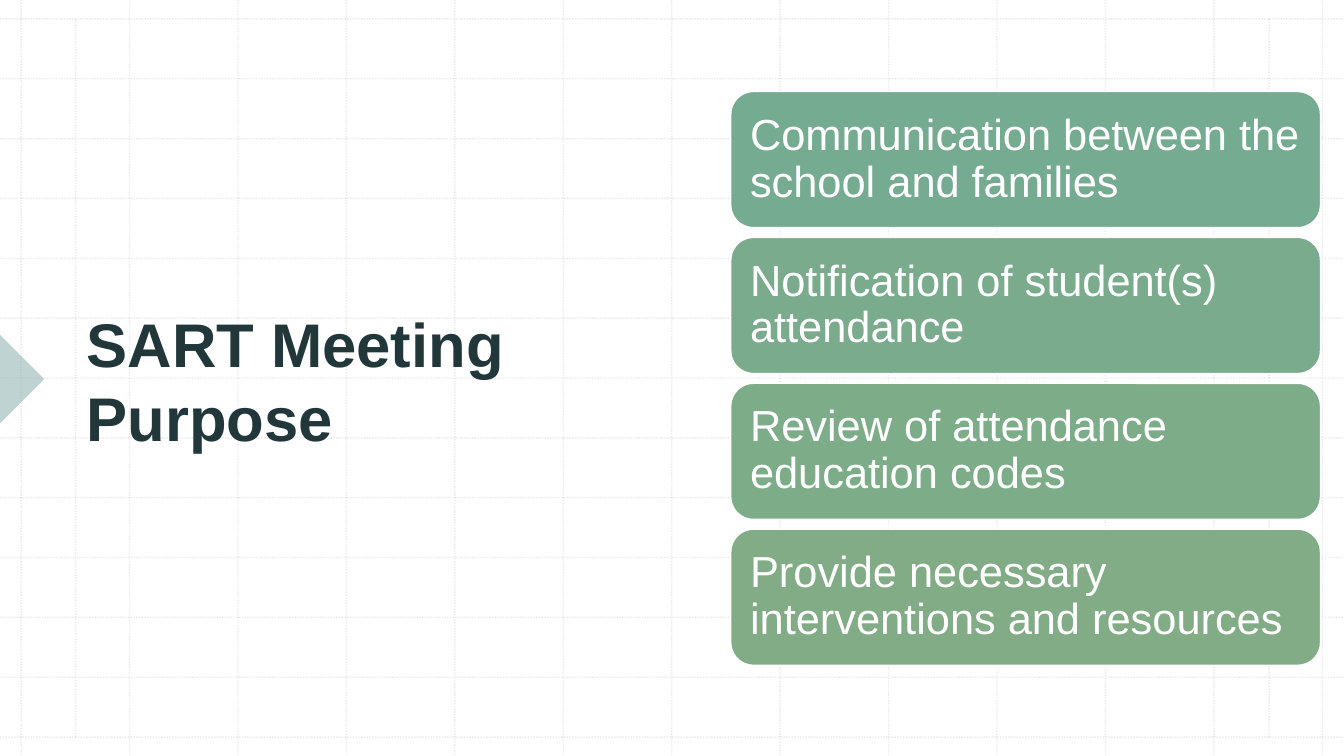
from lxml import etree
from pptx import Presentation
from pptx.dml.color import RGBColor
from pptx.enum.dml import MSO_LINE
from pptx.enum.shapes import MSO_CONNECTOR, MSO_SHAPE
from pptx.enum.text import MSO_ANCHOR, PP_ALIGN
from pptx.oxml.ns import qn
from pptx.util import Pt

STRAIGHT = MSO_CONNECTOR.STRAIGHT
ROUND_DOT = MSO_LINE.ROUND_DOT
RIGHT_TRIANGLE = MSO_SHAPE.RIGHT_TRIANGLE
ROUNDED = MSO_SHAPE.ROUNDED_RECTANGLE
MIDDLE = MSO_ANCHOR.MIDDLE
LEFT = PP_ALIGN.LEFT

WHITE = RGBColor(0xFF, 0xFF, 0xFF)
GRID = RGBColor(0xBC, 0xBC, 0xBC)
TEAL = RGBColor(0x80, 0xA9, 0xA7)
TITLE = RGBColor(0x21, 0x37, 0x3A)
OUTLINE = RGBColor(0x59, 0x75, 0x74)

FONT = "Arial"
WIDTH, HEIGHT = 960, 540
GRID_COUNT = 13
GRID_LEFT, GRID_STEP_X = 15.1, 77.45
GRID_TOP, GRID_STEP_Y = 13.5, 42.75
GRID_BOTTOM = HEIGHT - GRID_TOP
FRAME_XS = (54, 906.5)
CARD_TOP, CARD_STEP = 65.4, 104.2
PURPOSES = [
    ("Communication between the school and families", RGBColor(0x75, 0xAB, 0x91)),
    ("Notification of student(s) attendance", RGBColor(0x79, 0xAB, 0x8C)),
    ("Review of attendance education codes", RGBColor(0x7D, 0xAC, 0x89)),
    ("Provide necessary interventions and resources", RGBColor(0x81, 0xAC, 0x86)),
]


def set_opacity(sp, percent):
    """Make the solid colour of a shape or line partly transparent."""
    color = next(sp._element.spPr.iter(qn("a:srgbClr")))
    etree.SubElement(color, qn("a:alpha"), val=str(percent * 1000))


def add_grid_line(s, x1, y1, x2, y2):
    """Draw one faint dotted line."""
    line = s.shapes.add_connector(STRAIGHT, Pt(x1), Pt(y1), Pt(x2), Pt(y2))
    line.line.color.rgb = GRID
    line.line.width = Pt(1)
    line.line.dash_style = ROUND_DOT
    set_opacity(line, 30)
    etree.SubElement(line._element.spPr, qn("a:effectLst"))


def add_grid(s):
    """Draw the background grid and its two inner frame lines."""
    for i in range(GRID_COUNT):
        x = GRID_LEFT + i * GRID_STEP_X
        y = GRID_TOP + i * GRID_STEP_Y
        add_grid_line(s, x, 0, x, HEIGHT)
        add_grid_line(s, 0, y, WIDTH, y)
    for x in FRAME_XS:
        add_grid_line(s, x, GRID_TOP, x, GRID_BOTTOM)


def add_marker(s):
    """Draw the triangle pointing in from the left edge."""
    sp = s.shapes.add_shape(RIGHT_TRIANGLE, Pt(-22.4), Pt(248.4), Pt(44.8), Pt(44.8))
    sp.shadow.inherit = False
    sp.rotation = 225
    sp.fill.solid()
    sp.fill.fore_color.rgb = TEAL
    sp.line.fill.background()
    set_opacity(sp, 50)


def write_text(tf, text, size, color):
    """Fill a text frame with one left-aligned paragraph and return it."""
    tf.word_wrap = True
    tf.vertical_anchor = MIDDLE
    tf.text = text
    p = tf.paragraphs[0]
    p.alignment = LEFT
    font = p.runs[0].font
    font.name = FONT
    font.size = Pt(size)
    font.color.rgb = color
    return p


def add_title(s, text):
    """Add the bold, thinly outlined title."""
    sp = s.shapes.add_textbox(Pt(54.7), Pt(56.9), Pt(426.2), Pt(428.4))
    p = write_text(sp.text_frame, text, 44, TITLE)
    p.space_after = Pt(6)
    r = p.runs[0]
    r.font.bold = True
    ln = etree.Element(qn("a:ln"), w=str(Pt(0.5)))
    fill = etree.SubElement(ln, qn("a:solidFill"))
    etree.SubElement(fill, qn("a:srgbClr"), val=str(OUTLINE))
    r.font._element.insert(0, ln)


def add_card(s, top, text, color):
    """Add one rounded purpose card."""
    sp = s.shapes.add_shape(ROUNDED, Pt(522), Pt(top), Pt(421.2), Pt(97.2))
    sp.shadow.inherit = False
    sp.fill.solid()
    sp.fill.fore_color.rgb = color
    sp.line.color.rgb = WHITE
    sp.line.width = Pt(1)
    tf = sp.text_frame
    tf.margin_left = tf.margin_right = tf.margin_top = tf.margin_bottom = Pt(9)
    write_text(tf, text, 31, WHITE).line_spacing = 0.9


def main():
    """Build the slide and save it."""
    prs = Presentation()
    prs.slide_width, prs.slide_height = Pt(WIDTH), Pt(HEIGHT)
    s = prs.slides.add_slide(prs.slide_layouts[6])
    add_grid(s)
    add_marker(s)
    add_title(s, "SART Meeting Purpose")
    for i, (text, color) in enumerate(PURPOSES):
        add_card(s, CARD_TOP + i * CARD_STEP, text, color)
    prs.save("out.pptx")


if __name__ == "__main__":
    main()
